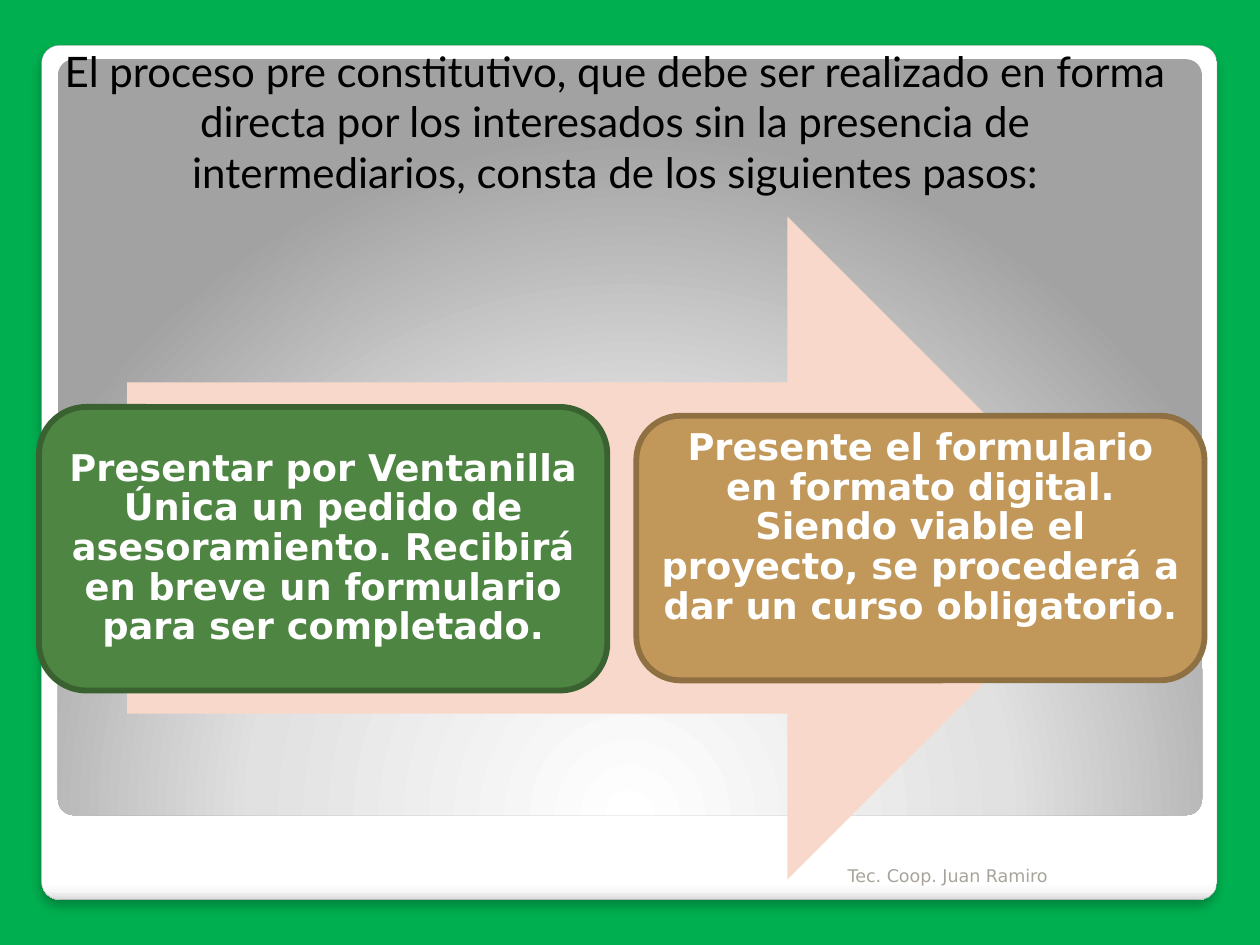
from lxml import etree
from pptx import Presentation
from pptx.dml.color import RGBColor
from pptx.enum.shapes import MSO_SHAPE
from pptx.enum.text import MSO_ANCHOR, MSO_AUTO_SIZE, PP_ALIGN
from pptx.oxml.ns import qn
from pptx.util import Inches, Pt

ROUNDED, ARROW = MSO_SHAPE.ROUNDED_RECTANGLE, MSO_SHAPE.RIGHT_ARROW
TOP, MIDDLE, BOTTOM = MSO_ANCHOR.TOP, MSO_ANCHOR.MIDDLE, MSO_ANCHOR.BOTTOM
LEFT, CENTER = PP_ALIGN.LEFT, PP_ALIGN.CENTER

BLACK = RGBColor(0x00, 0x00, 0x00)
WHITE = RGBColor(0xFF, 0xFF, 0xFF)
GREEN_BACKDROP = RGBColor(0x00, 0xB0, 0x50)
FRAME_EDGE = RGBColor(0xA4, 0xA4, 0xA4)
FOOTER_GRAY = RGBColor(0xA8, 0xA4, 0x9B)
ARROW_PINK = RGBColor(0xF9, 0xD8, 0xCC)
STEP_GREEN = RGBColor(0x4E, 0x85, 0x42)
STEP_GREEN_EDGE = RGBColor(0x3A, 0x62, 0x31)
STEP_TAN = RGBColor(0xC1, 0x98, 0x59)
STEP_TAN_EDGE = RGBColor(0x8F, 0x70, 0x42)

# Gradient stops: percent and colour
FRAME_STOPS = [(0, WHITE), (98, WHITE), (99, RGBColor(0xF7, 0xF7, 0xF7)),
               (100, RGBColor(0xDA, 0xDA, 0xDA))]
PANEL_STOPS = [(0, WHITE), (55, RGBColor(0xE1, 0xE1, 0xE1)),
               (100, RGBColor(0xA2, 0xA2, 0xA2))]

TITLE_FONT = {"name": "Lato", "size": Pt(24), "bold": False}
STEP_FONT = {"name": "DejaVu Sans", "size": Pt(21), "bold": True}
FOOTER_FONT = {"name": "DejaVu Sans", "size": Pt(10), "bold": False}

TITLE = ("El proceso pre constitutivo, que debe ser realizado en forma directa "
         "por los interesados sin la presencia de intermediarios, consta de los "
         "siguientes pasos:")
FOOTER = "Tec. Coop. Juan Ramiro"
# Text, box, fill, edge, bottom inset
STEPS = [
    ("Presentar por Ventanilla Única un pedido de asesoramiento. Recibirá en "
     "breve un formulario para ser completado.",
     (0.31, 3.23, 4.51, 2.25), STEP_GREEN, STEP_GREEN_EDGE, 0.09),
    ("Presente el formulario en formato digital. Siendo viable el proyecto, se "
     "procederá a dar un curso obligatorio.",
     (5.05, 3.3, 4.51, 2.1), STEP_TAN, STEP_TAN_EDGE, 0.41),
]


def inches(box):
    return [Inches(length) for length in box]


def add_child(parent, tag, **attributes):
    child = etree.SubElement(parent, qn(tag))
    for name, value in attributes.items():
        child.set(name, str(value))
    return child


def add_plain_shape(slide, kind, box, edge=None, edge_width=0):
    shape = slide.shapes.add_shape(kind, *inches(box))
    shape.shadow.inherit = False
    if edge is None:
        shape.line.fill.background()
    else:
        shape.line.color.rgb = edge
        shape.line.width = Pt(edge_width)
    return shape


def set_gradient(shape, stops):
    """Give the shape a gradient fill and return it, ready for its direction."""
    gradient = etree.Element(qn("a:gradFill"), rotWithShape="1")
    stop_list = add_child(gradient, "a:gsLst")
    for percent, color in stops:
        stop = add_child(stop_list, "a:gs", pos=percent * 1000)
        add_child(stop, "a:srgbClr", val=color)
    shape.element.spPr.find(qn("a:prstGeom")).addnext(gradient)
    return gradient


def write_text(frame, text, font, color, anchor, align):
    frame.word_wrap = True
    frame.auto_size = MSO_AUTO_SIZE.NONE
    frame.vertical_anchor = anchor
    paragraph = frame.paragraphs[0]
    paragraph.alignment = align
    run = paragraph.add_run()
    run.text = text
    for name, value in font.items():
        setattr(run.font, name, value)
    run.font.color.rgb = color
    return paragraph


def add_frame(slide, box):
    """White card with a soft shadow below it."""
    frame = add_plain_shape(slide, ROUNDED, box, FRAME_EDGE, 0.16)
    frame.adjustments[0] = 0.021
    add_child(set_gradient(frame, FRAME_STOPS), "a:lin", ang=90 * 60000, scaled=0)
    effects = frame.element.spPr.find(qn("a:effectLst"))
    shadow = add_child(effects, "a:outerShdw", blurRad=Pt(6), dist=Pt(4),
                       dir=90 * 60000, algn="ctr", rotWithShape=0)
    shadow_color = add_child(shadow, "a:srgbClr", val=BLACK)
    add_child(shadow_color, "a:alpha", val=25000)


def add_panel(slide, box):
    """Gray panel, lit from its bottom centre."""
    panel = add_plain_shape(slide, ROUNDED, box)
    panel.adjustments[0] = 0.021
    glow = add_child(set_gradient(panel, PANEL_STOPS), "a:path", path="circle")
    add_child(glow, "a:fillToRect", l=50000, t=175000, r=50000, b=-75000)


def add_footer(slide, box):
    footer = slide.shapes.add_textbox(*inches(box))
    write_text(footer.text_frame, FOOTER, FOOTER_FONT, FOOTER_GRAY, BOTTOM, LEFT)


def add_process(slide, arrow_box):
    """Arrow with the two steps on top of it."""
    arrow = add_plain_shape(slide, ARROW, arrow_box)
    arrow.fill.solid()
    arrow.fill.fore_color.rgb = ARROW_PINK
    for text, box, fill, edge, bottom in STEPS:
        step = add_plain_shape(slide, ROUNDED, box, edge, 3.35)
        step.fill.solid()
        step.fill.fore_color.rgb = fill
        frame = step.text_frame
        for side in ("left", "top", "right"):
            setattr(frame, f"margin_{side}", Inches(0.09))
        frame.margin_bottom = Inches(bottom)
        paragraph = write_text(frame, text, STEP_FONT, WHITE, MIDDLE, CENTER)
        paragraph.line_spacing = 0.9


def place_title(slide, box):
    title = slide.shapes.title
    title.left, title.top, title.width, title.height = inches(box)
    paragraph = write_text(title.text_frame, TITLE, TITLE_FONT, BLACK, TOP, CENTER)
    paragraph.space_before = Pt(0)
    # Bring the title in front of the panels
    slide.shapes.element.append(title.element)


def main():
    deck = Presentation()
    deck.slide_width, deck.slide_height = Inches(10), Inches(7.5)
    slide = deck.slides.add_slide(deck.slide_layouts.get_by_name("Title Only"))
    slide.background.fill.solid()
    slide.background.fill.fore_color.rgb = GREEN_BACKDROP

    add_frame(slide, (0.33, 0.36, 9.33, 6.78))
    add_panel(slide, (0.46, 0.47, 9.08, 6))
    add_footer(slide, (6.63, 6.68, 2.5, 0.4))
    add_process(slide, (1.01, 1.72, 7.87, 5.26))
    place_title(slide, (0.39, 0.31, 8.98, 1.72))
    deck.save("out.pptx")


if __name__ == "__main__":
    main()
